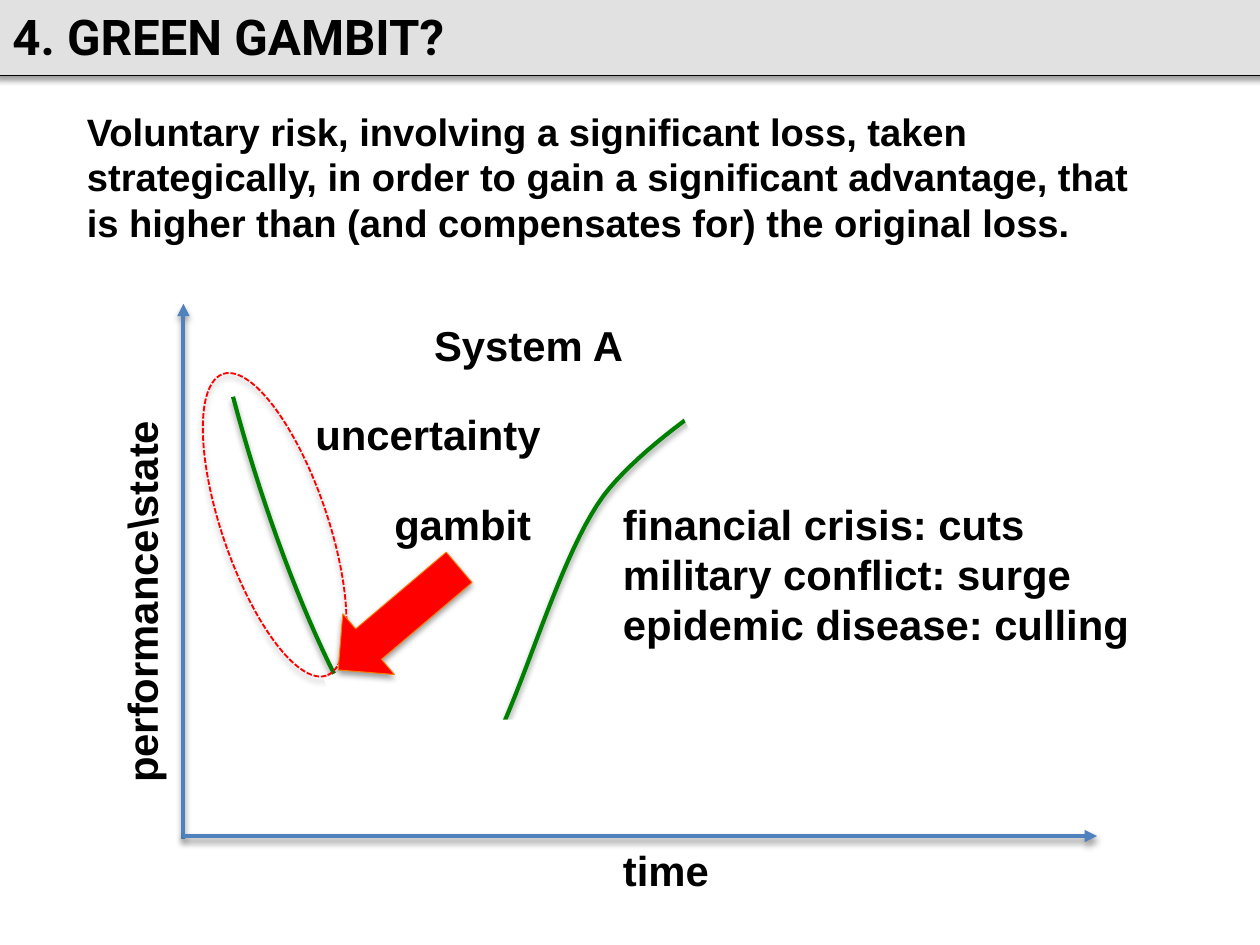
from dataclasses import dataclass

from lxml import etree
from pptx import Presentation
from pptx.dml.color import RGBColor
from pptx.enum.dml import MSO_LINE
from pptx.enum.shapes import MSO_CONNECTOR, MSO_SHAPE
from pptx.enum.text import MSO_ANCHOR, MSO_AUTO_SIZE, PP_ALIGN
from pptx.oxml.ns import qn
from pptx.util import Inches, Pt

STRAIGHT = MSO_CONNECTOR.STRAIGHT
RECT = MSO_SHAPE.RECTANGLE
OVAL = MSO_SHAPE.OVAL
ARROW = MSO_SHAPE.DOWN_ARROW
DASH = MSO_LINE.SQUARE_DOT
TOP = MSO_ANCHOR.TOP
LEFT = PP_ALIGN.LEFT
FIXED = MSO_AUTO_SIZE.NONE


@dataclass(frozen=True)
class Theme:
    """Hold the colours, fonts and sizes of the slide."""
    ink: str = "000000"
    page: str = "FFFFFF"
    bar: str = "E1E1E1"
    axis: str = "4F81BD"
    curve: str = "008000"
    risk: str = "FF0000"
    edge: str = "F97F00"
    font: str = "Arial"
    head: str = "Roboto"
    title: int = 40
    body: int = 31
    label: int = 34
    stroke: float = 3.35


THEME = Theme()

LABELS = [
    ("time", (6.89, 9.47, 1.4, 0.72), 0),
    ("performance\\state", (-0.62, 6.4, 4.44, 0.72), 270),
    ("System A", (4.76, 3.54, 2.6, 0.72), 0),
    ("uncertainty", (3.42, 4.55, 2.91, 0.72), 0),
    ("financial crisis: cuts\nmilitary conflict: surge epidemic disease: culling",
     (6.89, 5.56, 6.5, 1.87), 0),
    ("gambit", (4.31, 5.56, 1.9, 0.72), 0),
]

BENDS = [
    [(2.63, 4.48), (3.21, 6.67), (4.21, 8.87), (4.92, 9.05)],
    [(4.92, 9.05), (5.63, 9.22), (6.12, 6.41), (6.88, 5.51)],
    [(6.88, 5.51), (7.64, 4.61), (9.48, 3.65), (9.48, 3.65)],
]

GAPS = [
    ((3.37, 8.12, 1.46, 0.28), 63.6),
    ((4.47, 7.86, 1.13, 1.66), 90),
    ((8.41, 2.6, 1.13, 2.87), 62.9),
]


def shade(shape):
    """Give a shape a soft shadow below it."""
    props = shape._element.spPr
    for old in props.findall(qn("a:effectLst")):
        props.remove(old)
    list_ = etree.SubElement(props, qn("a:effectLst"))
    drop = etree.SubElement(list_, qn("a:outerShdw"), blurRad=str(Pt(5.2)),
                            dist=str(Pt(3)), dir="5400000", rotWithShape="0")
    tint = etree.SubElement(drop, qn("a:srgbClr"), val=THEME.ink)
    etree.SubElement(tint, qn("a:alpha"), val="40000")


def stroke(shape, color, width):
    """Set the colour and width of a line."""
    shape.line.color.rgb = RGBColor.from_string(color)
    shape.line.width = Pt(width)


def place(shape, box):
    """Move and size a shape in inches."""
    shape.left, shape.top, shape.width, shape.height = map(Inches, box)


def write(shape, text, size, font=THEME.font):
    """Fill a shape with bold text."""
    frame = shape.text_frame
    frame.text = text
    frame.word_wrap = True
    frame.auto_size = FIXED
    frame.vertical_anchor = TOP
    frame.margin_left = frame.margin_right = Inches(0.14)
    frame.margin_top = frame.margin_bottom = Inches(0.07)
    for para in frame.paragraphs:
        para.alignment = LEFT
        para.line_spacing = 1.0
        para.space_before = para.space_after = Pt(0)
        para.font.name = font
        para.font.size = Pt(size)
        para.font.bold = True
        para.font.color.rgb = RGBColor.from_string(THEME.ink)


def label(slide, text, box, turn):
    """Add a text label, turned if need be."""
    shape = slide.shapes.add_textbox(*map(Inches, box))
    shape.rotation = turn
    write(shape, text, THEME.label)


def axis(slide, start, end):
    """Add an axis with an arrowhead at its end."""
    line = slide.shapes.add_connector(STRAIGHT, *map(Inches, start + end))
    stroke(line, THEME.axis, THEME.stroke)
    etree.SubElement(line.line._get_or_add_ln(), qn("a:tailEnd"), type="triangle")
    shade(line)


def trace(knots, steps=32):
    """Return points along a cubic curve."""
    points = []
    for step in range(steps + 1):
        t = step / steps
        u = 1 - t
        parts = (u ** 3, 3 * u * u * t, 3 * u * t * t, t ** 3)
        points.append(tuple(Inches(sum(p * k[i] for p, k in zip(parts, knots)))
                            for i in (0, 1)))
    return points


def curve(slide, bends):
    """Draw one open curve through all the bends."""
    points = [point for knots in bends for point in trace(knots)]
    pen = slide.shapes.build_freeform(*points[0])
    pen.add_line_segments(points[1:], close=False)
    shape = pen.convert_to_shape()
    shape.fill.background()
    stroke(shape, THEME.curve, THEME.stroke)
    shade(shape)


def block(slide, kind, box, fill, color=None, width=0, turn=0):
    """Add a preset shape; without a line it is flat."""
    shape = slide.shapes.add_shape(kind, *map(Inches, box))
    shape.rotation = turn
    shape.shadow.inherit = False
    if fill:
        shape.fill.solid()
        shape.fill.fore_color.rgb = RGBColor.from_string(fill)
    else:
        shape.fill.background()
    if color:
        stroke(shape, color, width)
        shade(shape)
    else:
        shape.line.fill.background()
    return shape


def header(slide, text):
    """Set the title over a grey bar."""
    bar = block(slide, RECT, (-0.05, -0.04, 14.32, 0.89), THEME.bar, THEME.ink, 0.25)
    slide.shapes._spTree.insert(2, bar._element)
    title = slide.shapes.title
    place(title, (0, 0, 5.62, 0.82))
    write(title, text, THEME.title, THEME.head)


def body(slide, text):
    """Set the body text without a bullet."""
    shape = slide.placeholders[1]
    place(shape, (0.84, 1.15, 12.43, 1.72))
    write(shape, text, THEME.body)
    props = shape.text_frame.paragraphs[0]._p.get_or_add_pPr()
    props.set("marL", "0")
    props.set("indent", "0")
    etree.SubElement(props, qn("a:buNone"))
    props.append(props.find(qn("a:defRPr")))


def main():
    """Build the slide and save it."""
    deck = Presentation()
    deck.slide_width, deck.slide_height = Inches(14.22), Inches(10.67)
    slide = deck.slides.add_slide(deck.slide_layouts[1])
    header(slide, "4. GREEN GAMBIT?")
    body(slide, "Voluntary risk, involving a significant loss, taken strategically, "
                "in order to gain a significant advantage, that is higher than "
                "(and compensates for) the original loss.")
    axis(slide, (2.07, 9.47), (2.07, 3.43))
    axis(slide, (2.07, 9.44), (12.38, 9.44))
    curve(slide, BENDS)
    block(slide, OVAL, (1.3, 5.33, 3.6, 1.19), None, THEME.risk, 1.5,
          251.1).line.dash_style = DASH
    for box, turn in GAPS:
        block(slide, RECT, box, THEME.page, turn=turn)
    block(slide, ARROW, (4.05, 6.09, 0.9, 1.79), THEME.risk, THEME.edge, 0.75, 49.7)
    for text, box, turn in LABELS:
        label(slide, text, box, turn)
    deck.save("out.pptx")


if __name__ == "__main__":
    main()
